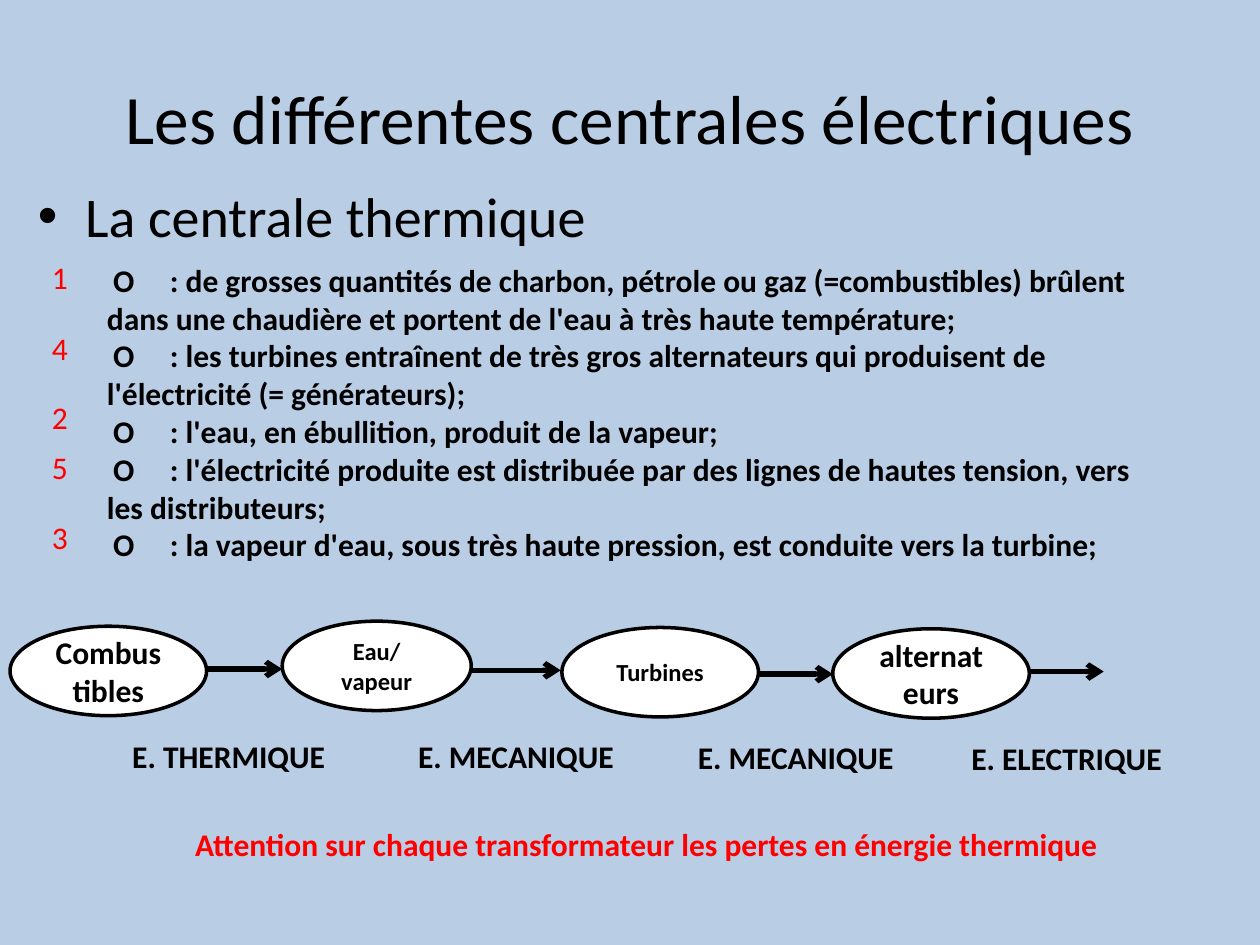
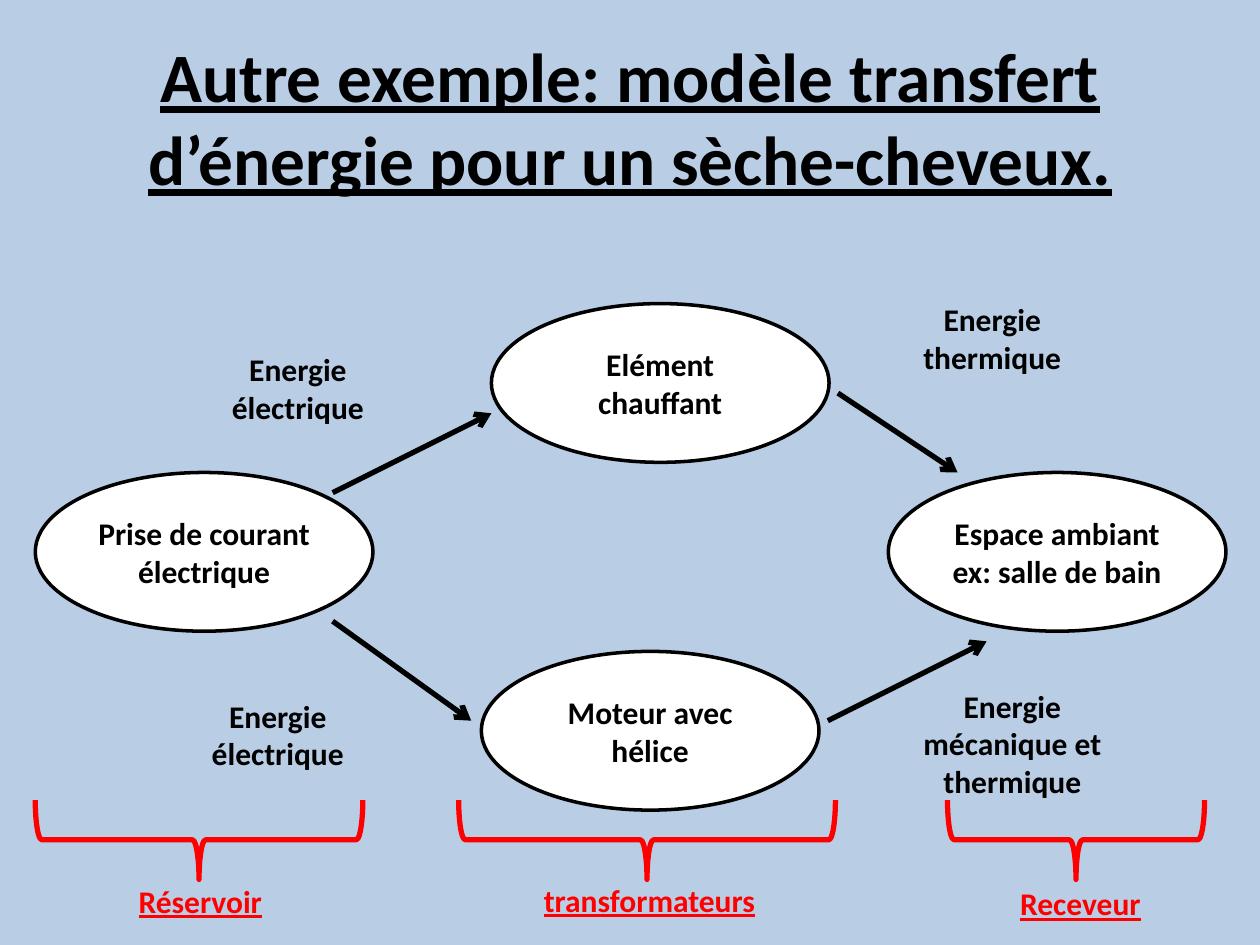
"""Build two slides on energy transfer: a thermal power plant and a hair dryer."""
import dataclasses

import lxml.etree
import pptx
import pptx.dml.color
import pptx.enum.shapes
import pptx.enum.text
import pptx.oxml.ns
import pptx.util

Inches = pptx.util.Inches
Pt = pptx.util.Pt
qn = pptx.oxml.ns.qn
ALIGN = pptx.enum.text.PP_ALIGN
ANCHOR = pptx.enum.text.MSO_ANCHOR
AUTO_SIZE = pptx.enum.text.MSO_AUTO_SIZE
SHAPE = pptx.enum.shapes.MSO_SHAPE


@dataclasses.dataclass(frozen=True)
class Theme:
    font: str = "Calibri"
    sky: str = "B9CDE5"
    ink: str = "000000"
    paper: str = "FFFFFF"
    accent: str = "FF0000"
    title_size: float = 39.6
    list_size: float = 32
    text_size: float = 18
    small_size: float = 14
    outline: float = 2
    stroke: float = 3


def rgb(code):
    return pptx.dml.color.RGBColor.from_string(code)


class Deck:
    def __init__(self, theme):
        self.theme = theme
        self.prs = pptx.Presentation()
        self.prs.slide_width = Inches(10)
        self.prs.slide_height = Inches(7.5)
        backdrop = self.prs.slide_master.background.fill
        backdrop.solid()
        backdrop.fore_color.rgb = rgb(theme.sky)
        self.slide = None

    def new_slide(self, layout, title, **look):
        self.slide = self.prs.slides.add_slide(self.prs.slide_layouts.get_by_name(layout))
        heading = self.slide.shapes.title
        self.place(heading, 0.5, 0.3, 9, 1.25)
        heading.text_frame.text = title
        heading.text_frame.auto_size = AUTO_SIZE.NONE
        self.format(heading, self.theme.title_size, **look)

    def place(self, shape, left, top, width, height):
        shape.left, shape.top = Inches(left), Inches(top)
        shape.width, shape.height = Inches(width), Inches(height)

    def format(self, shape, size, color=None, bold=False, underline=False, align=ALIGN.CENTER):
        for paragraph in shape.text_frame.paragraphs:
            paragraph.alignment = align
            for run in paragraph.runs:
                run.font.name = self.theme.font
                run.font.size = Pt(size)
                run.font.bold = bold
                run.font.underline = underline
                run.font.color.rgb = rgb(color or self.theme.ink)

    def bullets(self, text, left, top, width, height):
        body = self.slide.placeholders[1]
        self.place(body, left, top, width, height)
        body.text_frame.text = text
        body.text_frame.auto_size = AUTO_SIZE.NONE
        self.format(body, self.theme.list_size, align=ALIGN.LEFT)

    def text(self, text, left, top, width, height=0.4, bold=True, **look):
        box = self.slide.shapes.add_textbox(
            Inches(left), Inches(top), Inches(width), Inches(height))
        box.text_frame.word_wrap = True
        box.text_frame.auto_size = AUTO_SIZE.SHAPE_TO_FIT_TEXT
        box.text_frame.text = text
        self.format(box, self.theme.text_size, bold=bold, **look)
        return box

    def tabbed_text(self, lines, left, top, width, height, indent, tab):
        box = self.text("\n".join(lines), left, top, width, height, align=ALIGN.LEFT)
        for paragraph in box.text_frame.paragraphs:
            properties = paragraph._p.get_or_add_pPr()
            properties.set("marL", "0")
            properties.set("indent", str(Inches(indent)))
            stops = lxml.etree.SubElement(properties, qn("a:tabLst"))
            lxml.etree.SubElement(stops, qn("a:tab"), pos=str(Inches(tab)), algn="l")

    def ellipse(self, text, left, top, width, height, size=None):
        stage = self.slide.shapes.add_shape(
            SHAPE.OVAL, Inches(left), Inches(top), Inches(width), Inches(height))
        stage.shadow.inherit = False
        stage.fill.solid()
        stage.fill.fore_color.rgb = rgb(self.theme.paper)
        stage.line.color.rgb = rgb(self.theme.ink)
        stage.line.width = Pt(self.theme.outline)
        stage.text_frame.word_wrap = True
        stage.text_frame.vertical_anchor = ANCHOR.MIDDLE
        stage.text_frame.text = text
        self.format(stage, size or self.theme.text_size, bold=True)

    def arrow(self, x1, y1, x2, y2):
        transfer = self.slide.shapes.add_connector(
            pptx.enum.shapes.MSO_CONNECTOR.STRAIGHT,
            Inches(x1), Inches(y1), Inches(x2), Inches(y2))
        transfer.line.color.rgb = rgb(self.theme.ink)
        transfer.line.width = Pt(self.theme.stroke)
        properties = transfer.element.spPr
        lxml.etree.SubElement(properties.find(qn("a:ln")), qn("a:tailEnd"), type="arrow")
        lxml.etree.SubElement(properties, qn("a:effectLst"))

    def brace_below(self, left, top, span, depth=0.63):
        brace = self.slide.shapes.add_shape(
            SHAPE.LEFT_BRACE, Inches(left + (span - depth) / 2),
            Inches(top - (span - depth) / 2), Inches(depth), Inches(span))
        brace.rotation = 270
        brace.shadow.inherit = False
        brace.fill.background()
        brace.line.color.rgb = rgb(self.theme.accent)
        brace.line.width = Pt(self.theme.stroke)


def thermal_plant(deck):
    theme = deck.theme
    deck.new_slide("Title and Content", "Les différentes centrales électriques")
    deck.bullets("La centrale thermique", 0.2, 1.39, 9, 0.74)

    steps = [
        ("1", 2, "de grosses quantités de charbon, pétrole ou gaz (=combustibles) brûlent "
                 "dans une chaudière et portent de l'eau à très haute température;"),
        ("4", 2.56, "les turbines entraînent de très gros alternateurs qui produisent de "
                    "l'électricité (= générateurs);"),
        ("2", 3.11, "l'eau, en ébullition, produit de la vapeur;"),
        ("5", 3.51, "l'électricité produite est distribuée par des lignes de hautes tension, "
                    "vers les distributeurs;"),
        ("3", 4.06, "la vapeur d'eau, sous très haute pression, est conduite vers la turbine;"),
    ]
    deck.tabbed_text([f"O\t: {step}" for _, _, step in steps],
                     0.75, 2.02, 8.35, 2.52, indent=0.05, tab=0.4)
    for rank, top, _ in steps:
        deck.text(rank, 0.2, top, 0.55, bold=False, color=theme.accent)

    chain = [
        ("Combustibles", 0.08, 4.97, 1.56, theme.text_size),
        ("Eau/ vapeur", 2.24, 4.93, 1.5, theme.small_size),
        ("Turbines", 4.46, 4.98, 1.56, theme.small_size),
        ("alternateurs", 6.61, 4.99, 1.56, theme.text_size),
    ]
    for stage, left, top, width, size in chain:
        deck.ellipse(stage, left, top, width, 0.71, size)

    transfers = [
        ("E. THERMIQUE", 0.91, 5.8, 1.65, 2.24, 5.31),
        ("E. MECANIQUE", 3.19, 5.8, 3.74, 4.45, 5.32),
        ("E. MECANIQUE", 5.41, 5.81, 6.02, 6.61, 5.35),
        ("E. ELECTRIQUE", 7.56, 5.82, 8.17, 8.76, 5.33),
    ]
    for energy, left, top, start, end, level in transfers:
        deck.arrow(start, level, end, level)
        deck.text(energy, left, top, 1.81)

    deck.text("Attention sur chaque transformateur les pertes en énergie thermique",
              1.45, 6.5, 7.48, color=theme.accent, align=ALIGN.LEFT)


def hair_dryer(deck):
    deck.new_slide("Title Only",
                   "Autre exemple: modèle transfert d’énergie pour un sèche-cheveux.",
                   bold=True, underline=True)

    for stage, left, top in [
        ("Prise de courant électrique", 0.28, 3.75),
        ("Espace ambiant ex: salle de bain", 7.05, 3.75),
        ("Elément chauffant", 3.9, 2.41),
        ("Moteur avec hélice", 3.82, 5.17),
    ]:
        deck.ellipse(stage, left, top, 2.68, 1.26)

    for energy, left, top, height, route in [
        ("Energie électrique", 1.38, 2.73, 0.71, (2.64, 3.91, 3.9, 3.28)),
        ("Energie électrique", 1.22, 5.48, 0.71, (2.64, 4.93, 3.74, 5.72)),
        ("Energie thermique", 6.89, 2.33, 0.71, (6.65, 3.12, 7.6, 3.75)),
        ("Energie mécanique et thermique", 7.05, 5.4, 1.01, (6.57, 5.72, 7.83, 5.09)),
    ]:
        deck.arrow(*route)
        deck.text(energy, left, top, 1.97, height)

    for role, brace_left, span, left, top, width in [
        ("Réservoir", 0.28, 2.6, 0.32, 6.95, 2.54),
        ("transformateurs", 3.64, 2.99, 3.58, 6.94, 3.15),
        ("Receveur", 7.52, 2.04, 7.58, 6.97, 1.99),
    ]:
        deck.brace_below(brace_left, 6.35, span)
        deck.text(role, left, top, width, color=deck.theme.accent, underline=True)


def main():
    deck = Deck(Theme())
    thermal_plant(deck)
    hair_dryer(deck)
    deck.prs.save("out.pptx")


if __name__ == "__main__":
    main()
